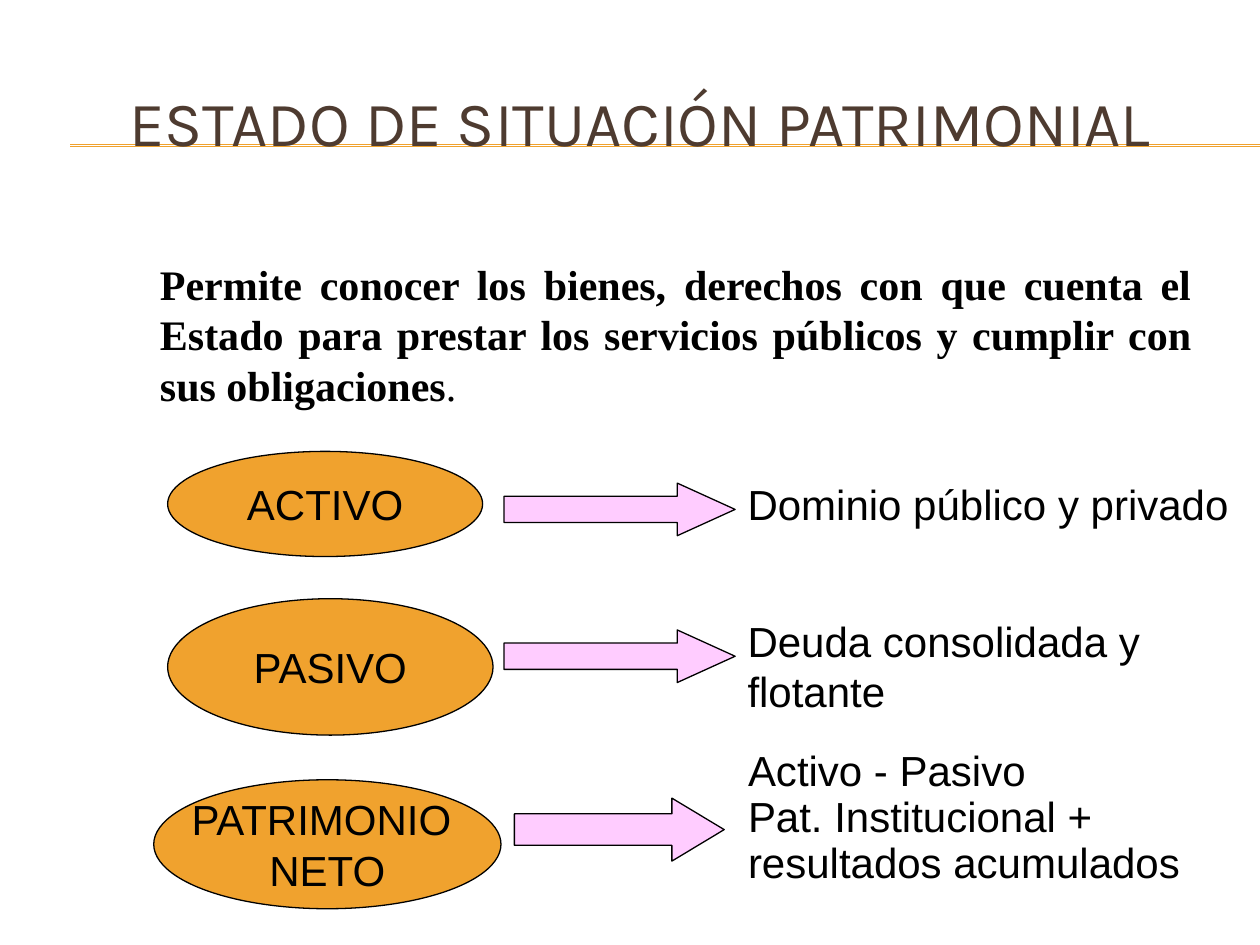
"""Build the slide on the statement of financial position."""
from dataclasses import dataclass

from lxml.etree import SubElement
from pptx import Presentation
from pptx.dml.color import RGBColor
from pptx.enum.shapes import MSO_CONNECTOR, MSO_SHAPE
from pptx.enum.text import MSO_ANCHOR, MSO_AUTO_SIZE, PP_ALIGN
from pptx.oxml.ns import qn
from pptx.util import Cm, Pt

AMBER = RGBColor(0xF0, 0xA2, 0x2E)
PINK = RGBColor(0xFF, 0xCC, 0xFF)
BROWN = RGBColor(0x4E, 0x3B, 0x30)
BLACK = RGBColor(0, 0, 0)


@dataclass
class Box:
    left: float
    top: float
    width: float
    height: float


@dataclass
class Row:
    name: list[str]
    oval: Box
    arrow: Box
    head: float
    lines: list[str]
    note: Box
    space: float = 1.0


ROWS = [
    Row(["ACTIVO"], Box(3.38, 9.1, 6.35, 2.12), Box(10.16, 9.74, 4.66, 1.06), 1.1,
        ["Dominio público y privado"], Box(14.82, 9.53, 10.5, 1.27)),
    Row(["PASIVO"], Box(3.38, 12.07, 6.56, 2.75), Box(10.16, 12.7, 4.66, 1.06), 1.1,
        ["Deuda consolidada y flotante"], Box(14.82, 12.28, 10.58, 2.29)),
    Row(["PATRIMONIO ", "NETO"], Box(3.1, 15.72, 7, 2.6), Box(10.37, 16.09, 4.23, 1.27), 0.83,
        ["Activo - Pasivo", "Pat. Institucional +", "resultados acumulados"],
        Box(14.83, 15.32, 10.57, 2.79), 0.5),
]


def place(shape, box: Box) -> None:
    """Move a shape to its box."""
    shape.left, shape.top = Cm(box.left), Cm(box.top)
    shape.width, shape.height = Cm(box.width), Cm(box.height)


def add_run(para, text: str, font: str = "Arial", size: int = 24,
            color: RGBColor = BLACK, bold: bool = False) -> None:
    """Add one formatted run to a paragraph."""
    run = para.add_run()
    run.text = text
    run.font.name, run.font.size, run.font.bold = font, Pt(size), bold
    run.font.color.rgb = color


def add_lines(frame, lines: list[str], align: PP_ALIGN,
              space: float = 1.0, before: float = 0) -> None:
    """Fill a text frame with one paragraph a line."""
    for i, text in enumerate(lines):
        para = frame.add_paragraph() if i else frame.paragraphs[0]
        para.alignment, para.space_before = align, Pt(before)
        if space != 1:
            para.line_spacing = space
        add_run(para, text)


def add_form(slide, kind: MSO_SHAPE, box: Box, color: RGBColor):
    """Draw a filled shape with a thin black outline."""
    form = slide.shapes.add_shape(kind, 0, 0, 0, 0)
    place(form, box)
    form.shadow.inherit = False
    form.fill.solid()
    form.fill.fore_color.rgb = color
    form.line.color.rgb, form.line.width = BLACK, Pt(0.75)
    return form


def add_rule(slide, top: float) -> None:
    """Draw a rule behind the title."""
    rule = slide.shapes.add_connector(
        MSO_CONNECTOR.STRAIGHT, Cm(1.42), Cm(top), Cm(25.4), Cm(top))
    rule.line.color.rgb, rule.line.width = AMBER, Pt(0.75)
    SubElement(rule.element.spPr, qn("a:effectLst"))
    rule.element.getparent().insert(2, rule.element)


def add_title(slide) -> None:
    """Fill the title placeholder."""
    title = slide.shapes.title
    place(title, Box(0.84, 1.27, 24.13, 2.34))
    title.text_frame.vertical_anchor = MSO_ANCHOR.MIDDLE
    para = title.text_frame.paragraphs[0]
    para.alignment = PP_ALIGN.CENTER
    add_run(para, "ESTADO DE SITUACIÓN PATRIMONIAL", "Karla", 36, BROWN)


def add_body(slide) -> None:
    """Fill the body placeholder with the justified statement."""
    body = slide.placeholders[1]
    place(body, Box(2.97, 5.08, 21.31, 3.3))
    body.text_frame.auto_size = MSO_AUTO_SIZE.SHAPE_TO_FIT_TEXT
    para = body.text_frame.paragraphs[0]
    para.alignment, para.space_before = PP_ALIGN.JUSTIFY, Pt(12)
    props = para._p.get_or_add_pPr()
    props.set("marL", "0")
    props.set("indent", "0")
    SubElement(props, qn("a:buNone"))
    add_run(para, "Permite conocer los bienes, derechos con que cuenta el Estado para "
            "prestar los servicios públicos y cumplir con sus obligaciones",
            "Times New Roman", bold=True)
    add_run(para, ".", "Times New Roman")


def add_row(slide, row: Row) -> None:
    """Draw an oval, its arrow and its note."""
    oval = add_form(slide, MSO_SHAPE.OVAL, row.oval, AMBER)
    oval.text_frame.word_wrap = False
    oval.text_frame.vertical_anchor = MSO_ANCHOR.MIDDLE
    add_lines(oval.text_frame, row.name, PP_ALIGN.CENTER)
    arrow = add_form(slide, MSO_SHAPE.RIGHT_ARROW, row.arrow, PINK)
    arrow.adjustments[1] = row.head
    note = slide.shapes.add_textbox(0, 0, 0, 0)
    place(note, row.note)
    note.text_frame.word_wrap = True
    note.text_frame.auto_size = MSO_AUTO_SIZE.SHAPE_TO_FIT_TEXT
    add_lines(note.text_frame, row.lines, PP_ALIGN.LEFT, row.space, 12)


def main() -> None:
    """Build and save the deck."""
    deck = Presentation()
    deck.slide_width, deck.slide_height = Cm(25.4), Cm(19.05)
    slide = deck.slides.add_slide(deck.slide_layouts[1])
    add_title(slide)
    add_body(slide)
    for top in (2.92, 2.95):
        add_rule(slide, top)
    for row in ROWS:
        add_row(slide, row)
    deck.save("out.pptx")


if __name__ == "__main__":
    main()
